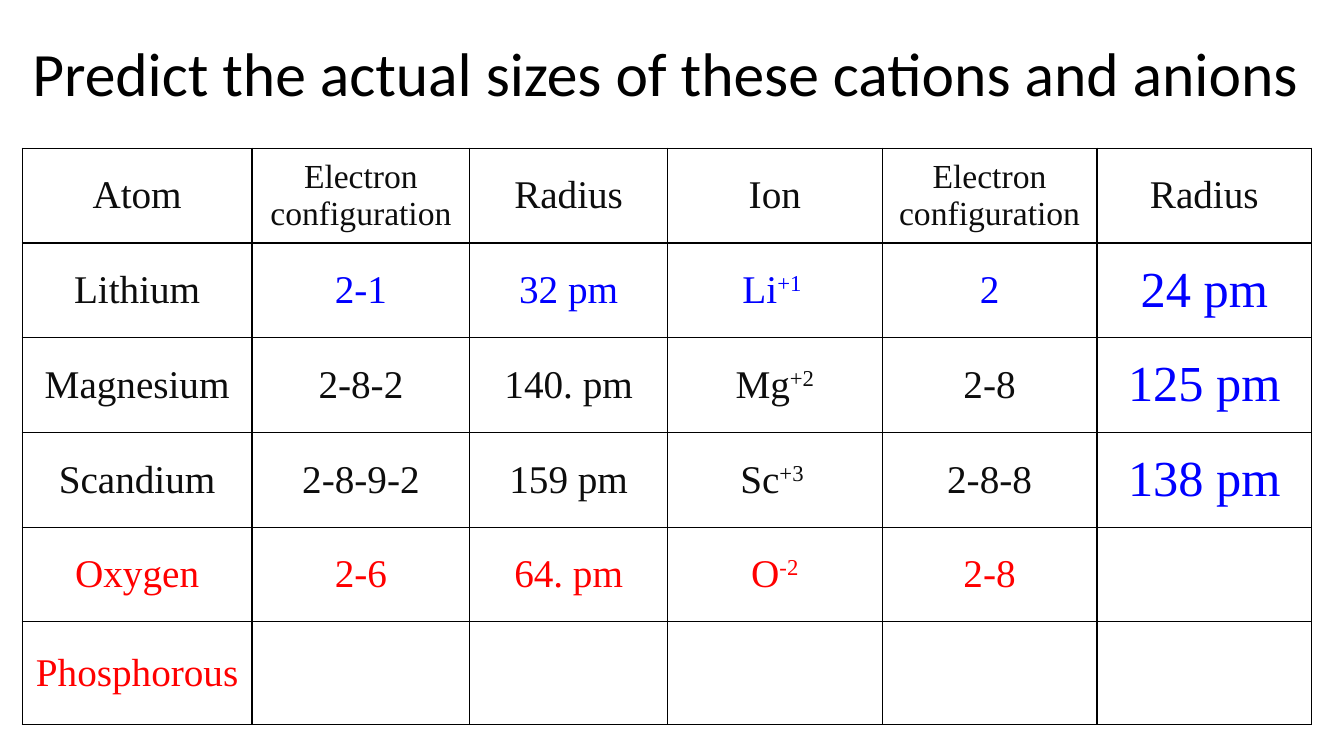
from dataclasses import dataclass

from lxml.etree import SubElement as Sub, Element as Elem
from pptx import Presentation as Deck
from pptx.dml.color import RGBColor as Rgb
from pptx.enum.text import MSO_ANCHOR as Anchor, PP_ALIGN as Align
from pptx.oxml.ns import qn
from pptx.util import Inches, Pt


@dataclass(frozen=True)
class Theme:
    black: str = "000000"
    ink: str = "0D0D0D"
    blue: str = "0000FF"
    red: str = "FF0000"
    white: str = "FFFFFF"
    title_font: str = "Calibri"
    font: str = "Times New Roman"
    title: int = 44
    large: int = 36
    body: int = 28
    small: int = 24
    line: int = 1


@dataclass(frozen=True)
class Entry:
    text: str  # "^" starts a superscript, a newline breaks the line
    color: str
    size: int


THEME = Theme()
WIDTHS = [2.28, 2.16, 1.96, 2.13, 2.13, 2.13]
HEIGHTS = [0.94] * 5 + [1.02]
HEADS = ["Atom", "Electron\nconfiguration", "Radius",
         "Ion", "Electron\nconfiguration", "Radius"]
ATOMS = [
    ["Lithium", "2-1", "32 pm", "Li^+1 ", "2", "24 pm"],
    ["Magnesium", "2-8-2", "140. pm", "Mg^+2", "2-8", "125 pm"],
    ["Scandium", "2-8-9-2", "159 pm", "Sc^+3 ", "2-8-8", "138 pm"],
    ["Oxygen", "2-6", "64. pm", "O^-2", "2-8", ""],
    ["Phosphorous", "", "", "", "", ""],
]
METALS = 3
LAST = len(HEADS) - 1


def assign(item, values: dict) -> None:
    for name, value in values.items():
        setattr(item, name, value)


def style(font, face: str, size: int, color: str) -> None:
    assign(font, {"name": face, "size": Pt(size)})
    font.color.rgb = Rgb.from_string(color)


def head(text: str) -> Entry:
    return Entry(text, THEME.ink, THEME.small if "\n" in text else THEME.body)


def entry(row: int, col: int, text: str) -> Entry:
    if row >= METALS:
        return Entry(text, THEME.red, THEME.body)
    if col == LAST:
        return Entry(text, THEME.blue, THEME.large)
    blue = row == 0 and col > 0
    return Entry(text, THEME.blue if blue else THEME.ink, THEME.body)


def add_run(para, text: str, item: Entry, raised: bool = False) -> None:
    run = para.add_run()
    run.text = text
    style(run.font, THEME.font, item.size, item.color)
    if raised:
        run.font._element.set("baseline", "30000")


def write(para, item: Entry) -> None:
    para.alignment = Align.CENTER
    for num, line in enumerate(item.text.split("\n")):
        if num:
            para.add_line_break()
        base, _, power = line.partition("^")
        if base:
            add_run(para, base, item)
        if power:
            add_run(para, power, item, raised=True)


def frame(cell) -> None:
    cell.fill.solid()
    cell.fill.fore_color.rgb = Rgb.from_string(THEME.white)
    props = cell._tc.get_or_add_tcPr()
    for num, side in enumerate("LRTB"):
        edge = Elem(qn(f"a:ln{side}"), w=str(Pt(THEME.line)))
        fill = Sub(edge, qn("a:solidFill"))
        Sub(fill, qn("a:srgbClr"), val=THEME.black)
        props.insert(num, edge)


def add_title(slide, text: str) -> None:
    title = slide.shapes.title
    assign(title, {"left": Inches(0.22), "top": Inches(0.29),
                   "width": Inches(13.12), "height": Inches(0.84)})
    body = title.text_frame
    assign(body, {"text": text, "word_wrap": True,
                  "vertical_anchor": Anchor.MIDDLE})
    para = body.paragraphs[0]
    para.alignment = Align.LEFT
    style(para.runs[0].font, THEME.title_font, THEME.title, THEME.black)


def add_grid(slide, rows: list[list[Entry]]) -> None:
    grid = slide.shapes.add_table(
        len(rows), len(WIDTHS), Inches(0.22), Inches(1.47),
        Inches(sum(WIDTHS)), Inches(sum(HEIGHTS))).table
    assign(grid, {"first_row": False, "horz_banding": False})
    for col, width in zip(grid.columns, WIDTHS):
        col.width = Inches(width)
    for line, height, items in zip(grid.rows, HEIGHTS, rows):
        line.height = Inches(height)
        for cell, item in zip(line.cells, items):
            frame(cell)
            cell.vertical_anchor = Anchor.MIDDLE
            write(cell.text_frame.paragraphs[0], item)


def main() -> None:
    deck = Deck()
    assign(deck, {"slide_width": Inches(13.33), "slide_height": Inches(7.5)})
    slide = deck.slides.add_slide(deck.slide_layouts.get_by_name("Title Only"))

    # Title
    add_title(slide, "Predict the actual sizes of these cations and anions")

    # Table of atoms and ions
    rows = [[head(text) for text in HEADS]]
    rows += [[entry(row, col, text) for col, text in enumerate(atom)]
             for row, atom in enumerate(ATOMS)]
    add_grid(slide, rows)

    deck.save("out.pptx")


if __name__ == "__main__":
    main()
